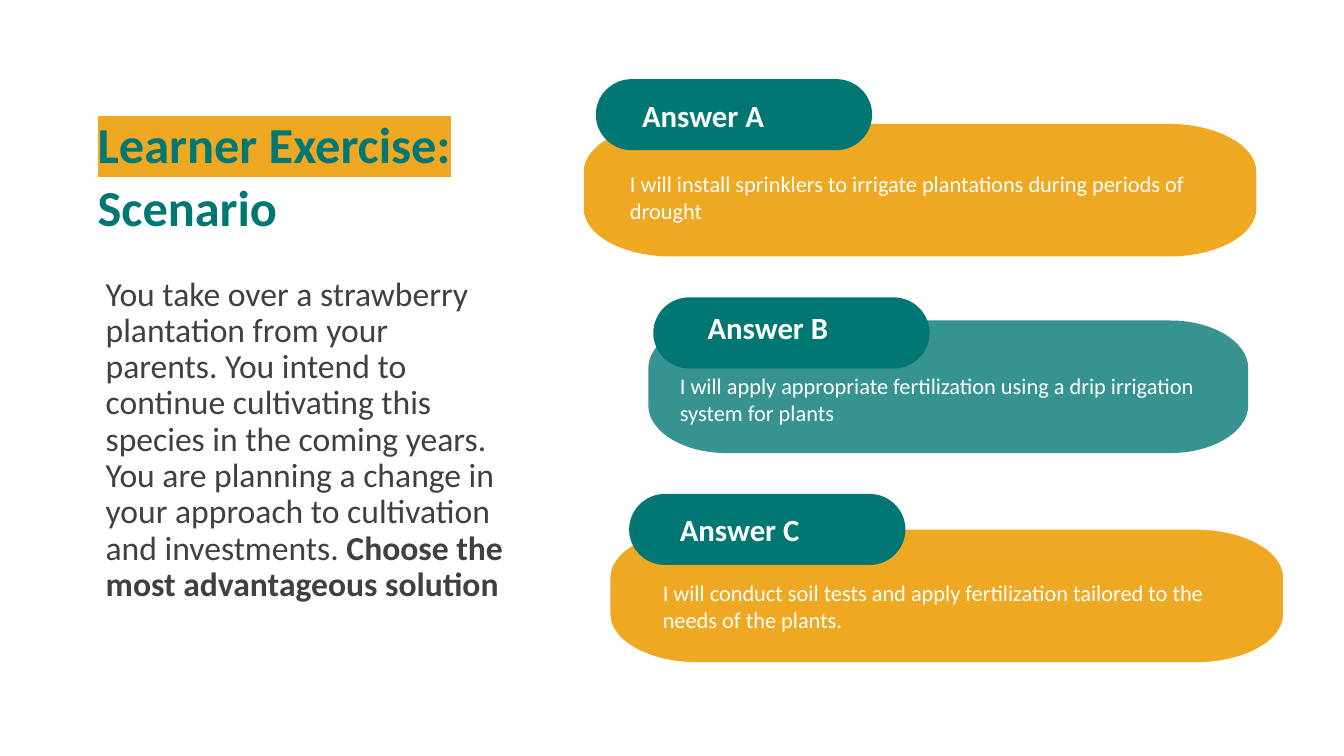
from pptx import Presentation, util as u
from pptx.dml.color import RGBColor
from pptx.enum import text
from pptx.oxml.ns import qn
from lxml import etree

# Content: places are (column, row, columns, rows) on a grid of tenth-inch cells
TITLE = {
    "place": (8.7, 11.9, 44.1, 13.1), "style": "title",
    "paras": [[("Learner Exercise:", {"highlight": "gold"})], [("Scenario", {})]],
}
SCENARIO = {
    "place": (9.5, 27, 41.6, 31.9), "style": "scenario",
    "paras": [[
        ("You take over a strawberry plantation from your parents. You intend to "
         "continue cultivating this species in the coming years. You are planning "
         "a change in your approach to cultivation and investments. ", {}),
        ("Choose the most advantageous solution", {"bold": True}),
    ]],
}
ANSWERS = [
    {"name": "Answer A", "color": "gold", "opacity": 100,
     "reply": "I will install sprinklers to irrigate plantations during periods of drought",
     "card": (57.9, 12.3, 66.7), "pill": (59.1, 7.85),
     "label": (62.7, 9.1), "note": (61.5, 16.4, 60.6)},
    {"name": "Answer B", "color": "teal", "opacity": 79,
     "reply": "I will apply appropriate fertilization using a drip irrigation system for plants",
     "card": (64.3, 31.8, 59.5), "pill": (64.8, 29.5),
     "label": (69.2, 30.15), "note": (66.45, 36.45, 57.5)},
    {"name": "Answer C", "color": "gold", "opacity": 100,
     "reply": "I will conduct soil tests and apply fertilization tailored to the needs of the plants.",
     "card": (60.55, 52.55, 66.7), "pill": (62.4, 49),
     "label": (66.45, 50.2), "note": (64.75, 56.95, 60.6)},
]
CARD_ROWS, NOTE_ROWS = 13.15, 6.4
PILL_SIZE, LABEL_SIZE = (27.4, 7.05), (27.4, 4.7)
CARD_CORNER = (0.13, 0.36)  # corner radii as shares of width and height
PILL_CORNER = (0.13, 0.5)
BEND = 0.55  # reach of a curve's handles towards its corner

THEME = {
    "colors": {"gold": "EEA821", "teal": "007772", "ink": "404040", "white": "FFFFFF"},
    "styles": {
        "title": {"size": 36, "bold": True, "color": "teal",
                  "spacing": 0.8, "before": 10, "grow": False},
        "scenario": {"size": 24, "bold": False, "color": "ink",
                     "spacing": 0.9, "before": 10, "grow": False},
        "label": {"size": 22, "bold": True, "color": "white",
                  "spacing": 1, "before": 0, "grow": True},
        "note": {"size": 16, "bold": False, "color": "white",
                 "spacing": 1, "before": 0, "grow": True},
    },
    "font": "Calibri",
}

deck = Presentation()
deck.slide_width, deck.slide_height = u.Inches(13.33), u.Inches(7.5)
page = deck.slides.add_slide(deck.slide_layouts[6])


def cells(*values):
    return [u.Inches(value / 10) for value in values]


def color(name):
    return RGBColor.from_string(THEME["colors"][name])


# Text
def add_text(place, style, paras):
    look = THEME["styles"][style]
    frame = page.shapes.add_textbox(*cells(*place)).text_frame
    frame.word_wrap = True
    frame.vertical_anchor = text.MSO_ANCHOR.TOP
    if look["grow"]:
        frame.auto_size = text.MSO_AUTO_SIZE.SHAPE_TO_FIT_TEXT
    for index, spans in enumerate(paras):
        para = frame.add_paragraph() if index else frame.paragraphs[0]
        para.line_spacing = look["spacing"]
        para.space_before = u.Pt(look["before"] if index else 0)
        for words, extra in spans:
            span = para.add_run()
            span.text = words
            formats = {"name": THEME["font"], "size": u.Pt(look["size"]),
                       "bold": extra.get("bold", look["bold"])}
            for key, value in formats.items():
                setattr(span.font, key, value)
            span.font.color.rgb = color(look["color"])
            if "highlight" in extra:
                mark = etree.Element(qn("a:highlight"))
                tint = THEME["colors"][extra["highlight"]]
                etree.SubElement(mark, qn("a:srgbClr"), val=tint)
                span.font._element.find(qn("a:solidFill")).addnext(mark)


# Shapes
def bend_corner(line, start, end, corner):
    """Turn a straight corner cut into a rounded one."""
    curve = etree.Element(qn("a:cubicBezTo"))
    handles = [[round(a + (c - a) * BEND) for a, c in zip(point, corner)]
               for point in (start, end)]
    for x, y in (*handles, end):
        etree.SubElement(curve, qn("a:pt"), x=str(x), y=str(y))
    line.getparent().replace(line, curve)


def add_rounded(left, top, width, height, corner, name, opacity=100):
    radius_x, radius_y = corner[0] * width, corner[1] * height
    right, bottom = left + width, top + height
    points = [cells(*point) for point in (
        (right - radius_x, bottom), (left + radius_x, bottom),
        (left, bottom - radius_y), (left, top + radius_y),
        (left + radius_x, top), (right - radius_x, top),
        (right, top + radius_y), (right, bottom - radius_y),
        (right - radius_x, bottom))]
    outline = page.shapes.build_freeform(*points[0])
    outline.add_line_segments(points[1:], close=True)
    shape = outline.convert_to_shape()

    lines = list(shape._element.iter(qn("a:lnTo")))
    local = [(x - shape.left, y - shape.top) for x, y in points]
    for index in range(1, 8, 2):
        start, end = local[index], local[index + 1]
        from_level_side = index in (1, 5)
        tip = (end[0], start[1]) if from_level_side else (start[0], end[1])
        bend_corner(lines[index], start, end, tip)

    shape.shadow.inherit = False
    shape.fill.solid()
    shape.fill.fore_color.rgb = color(name)
    shape.line.fill.background()
    if opacity < 100:
        tint = shape._element.spPr.find(qn("a:solidFill")).find(qn("a:srgbClr"))
        etree.SubElement(tint, qn("a:alpha"), val=str(opacity * 1000))


# Left side: the exercise
for block in (TITLE, SCENARIO):
    add_text(**block)

# Right side: the answers
for answer in ANSWERS:
    add_rounded(*answer["card"], CARD_ROWS, CARD_CORNER,
                answer["color"], answer["opacity"])
for answer in ANSWERS:
    add_rounded(*answer["pill"], *PILL_SIZE, PILL_CORNER, "teal")
for answer in ANSWERS:
    add_text((*answer["label"], *LABEL_SIZE), "label", [[(answer["name"], {})]])
for answer in ANSWERS:
    add_text((*answer["note"], NOTE_ROWS), "note", [[(answer["reply"], {})]])

deck.save("out.pptx")
